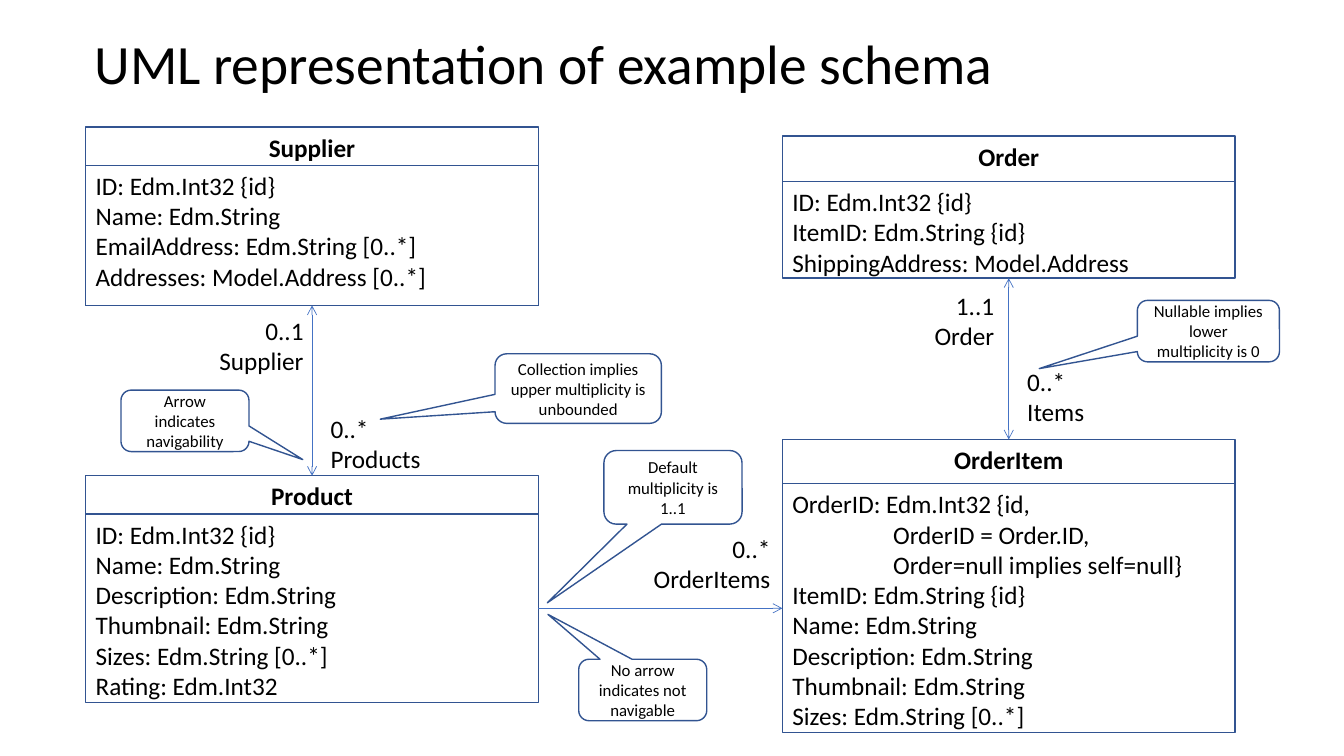
from dataclasses import dataclass

from lxml import etree
from pptx import Presentation
from pptx.dml.color import RGBColor
from pptx.enum.shapes import MSO_CONNECTOR, MSO_SHAPE
from pptx.enum.text import MSO_ANCHOR, PP_ALIGN
from pptx.oxml.ns import qn
from pptx.util import Inches, Pt

LEFT, CENTER, RIGHT = PP_ALIGN.LEFT, PP_ALIGN.CENTER, PP_ALIGN.RIGHT
TOP, MIDDLE = MSO_ANCHOR.TOP, MSO_ANCHOR.MIDDLE
RECTANGLE = MSO_SHAPE.RECTANGLE
CALLOUT = MSO_SHAPE.ROUNDED_RECTANGULAR_CALLOUT
STRAIGHT = MSO_CONNECTOR.STRAIGHT
SIDE_TOP, SIDE_LEFT, SIDE_BOTTOM, SIDE_RIGHT = range(4)


@dataclass(frozen=True)
class Theme:
    font: str = "Calibri"
    text: RGBColor = RGBColor(0x00, 0x00, 0x00)
    paper: RGBColor = RGBColor(0xFF, 0xFF, 0xFF)
    outline: RGBColor = RGBColor(0x32, 0x54, 0x91)
    link: RGBColor = RGBColor(0x44, 0x72, 0xC4)
    title_size: float = 39.6
    body_size: float = 18
    note_size: float = 12
    outline_width: float = 1
    link_width: float = 0.5


THEME = Theme()
CLASS_WIDTH = 4.49
CONTINUATION_INDENT = 1.0

# name, left, top, frame height, attributes top, attributes height, attributes
CLASSES = [
    ("Supplier", 0.85, 1.26, 1.77, 1.64, 1.39, [
        "ID: Edm.Int32 {id}", "Name: Edm.String",
        "EmailAddress: Edm.String [0..*]", "Addresses: Model.Address [0..*]"]),
    ("Product", 0.85, 4.72, 1.77, 5.1, 1.87, [
        "ID: Edm.Int32 {id}", "Name: Edm.String", "Description: Edm.String",
        "Thumbnail: Edm.String", "Sizes: Edm.String [0..*]", "Rating: Edm.Int32"]),
    ("OrderItem", 7.76, 4.36, 2.07, 4.8, 2.47, [
        "OrderID: Edm.Int32 {id,", "OrderID = Order.ID,", "Order=null implies self=null}",
        "ItemID: Edm.String {id}", "Name: Edm.String", "Description: Edm.String",
        "Thumbnail: Edm.String", "Sizes: Edm.String [0..*]"]),
    ("Order", 7.76, 1.35, 1.11, 1.8, 0.96, [
        "ID: Edm.Int32 {id}", "ItemID: Edm.String {id}", "ShippingAddress: Model.Address"]),
]
CONTINUATIONS = {"OrderID = Order.ID,", "Order=null implies self=null}"}

# multiplicity, role, left, top, width, alignment
ROLES = [
    ("0..*", "OrderItems", 6.37, 5.24, 1.37, RIGHT),
    ("0..1", "Supplier", 2.06, 3.08, 1.05, RIGHT),
    ("1..1", "Order", 9.16, 2.83, 0.8, RIGHT),
    ("0..*", "Items", 10.09, 3.58, 0.77, LEFT),
    ("0..*", "Products", 3.18, 4.05, 1.1, LEFT),
]

# text, (left, top, width, height), pointer offset as a share of width and height
NOTES = [
    ("Arrow indicates navigability", (1.2, 3.87, 1.27, 0.61), (0.92, 0.63)),
    ("No arrow indicates not navigable", (5.74, 6.54, 1.27, 0.61), (-0.74, -1.23)),
    ("Default multiplicity is 1..1", (5.99, 4.47, 1.37, 0.73), (-0.91, 1.57)),
    ("Nullable implies lower multiplicity is 0", (11.28, 2.98, 1.41, 0.61), (-1.19, 0.61)),
    ("Collection implies upper multiplicity is unbounded",
     (4.91, 3.51, 1.65, 0.69), (-1.19, 0.44)),
]


def add_span(para, text, size, bold=False):
    span = para.add_run()
    span.text = text
    span.font.name = THEME.font
    span.font.size = Pt(size)
    span.font.bold = bold
    span.font.color.rgb = THEME.text


def write_lines(shape, lines, size, align=LEFT, anchor=TOP, bold=False):
    """Write one paragraph per line and return the paragraphs."""
    frame = shape.text_frame
    frame.word_wrap = True
    frame.vertical_anchor = anchor
    paras = [frame.paragraphs[0]] + [frame.add_paragraph() for _ in lines[1:]]
    for para, line in zip(paras, lines):
        para.alignment = align
        add_span(para, line, size, bold)
    return paras


def add_outlined(shapes, preset, box, filled=True):
    shape = shapes.add_shape(preset, *map(Inches, box))
    shape.shadow.inherit = False
    if filled:
        shape.fill.solid()
        shape.fill.fore_color.rgb = THEME.paper
    else:
        shape.fill.background()
    shape.line.color.rgb = THEME.outline
    shape.line.width = Pt(THEME.outline_width)
    return shape


def add_title(page, text):
    box = page.shapes.add_textbox(Inches(0.84), Inches(0.35), Inches(11.5), Inches(0.61))
    para, = write_lines(box, [text], THEME.title_size, anchor=MIDDLE)
    para.line_spacing = 0.9


def add_class(page, name, left, top, height, body_top, body_height, attributes):
    """Draw a UML class as a group and return its header and attribute boxes."""
    group = page.shapes.add_group_shape()
    header = add_outlined(group.shapes, RECTANGLE, (left, top, CLASS_WIDTH, height), filled=False)
    write_lines(header, [name], THEME.body_size, CENTER, bold=True)
    body = add_outlined(group.shapes, RECTANGLE, (left, body_top, CLASS_WIDTH, body_height))
    for para in write_lines(body, attributes, THEME.body_size):
        if para.text in CONTINUATIONS:
            para._p.get_or_add_pPr().set("marL", str(Inches(CONTINUATION_INDENT)))
    return header, body


def add_association(page, start, start_side, end, end_side, both_ways=True):
    link = page.shapes.add_connector(STRAIGHT, 0, 0, 0, 0)
    link.begin_connect(start, start_side)
    link.end_connect(end, end_side)
    link.line.color.rgb = THEME.link
    link.line.width = Pt(THEME.link_width)
    line = link.line._get_or_add_ln()
    for tag in ("a:headEnd", "a:tailEnd") if both_ways else ("a:tailEnd",):
        etree.SubElement(line, qn(tag), type="arrow")
    etree.SubElement(link._element.spPr, qn("a:effectLst"))


def add_role(page, multiplicity, role, left, top, width, align):
    box = page.shapes.add_textbox(Inches(left), Inches(top), Inches(width), Inches(0.71))
    para, = write_lines(box, [multiplicity], THEME.body_size, align)
    para.add_line_break()
    add_span(para, role, THEME.body_size)
    box.text_frame.word_wrap = False


def add_note(page, text, box, pointer):
    note = add_outlined(page.shapes, CALLOUT, box)
    note.adjustments[0], note.adjustments[1] = pointer
    write_lines(note, [text], THEME.note_size, CENTER, MIDDLE)


def main():
    deck = Presentation()
    deck.slide_width, deck.slide_height = Inches(13.33), Inches(7.5)
    page = deck.slides.add_slide(deck.slide_layouts[6])

    add_title(page, "UML representation of example schema")
    classes = {entry[0]: add_class(page, *entry) for entry in CLASSES}
    supplier_body = classes["Supplier"][1]
    product_header, product_body = classes["Product"]
    item_header, item_body = classes["OrderItem"]
    order_body = classes["Order"][1]

    add_association(page, supplier_body, SIDE_BOTTOM, product_header, SIDE_TOP)
    add_association(page, product_body, SIDE_RIGHT, item_body, SIDE_LEFT, both_ways=False)
    add_association(page, item_header, SIDE_TOP, order_body, SIDE_BOTTOM)
    for role in ROLES:
        add_role(page, *role)
    for note in NOTES:
        add_note(page, *note)
    deck.save("out.pptx")


if __name__ == "__main__":
    main()
